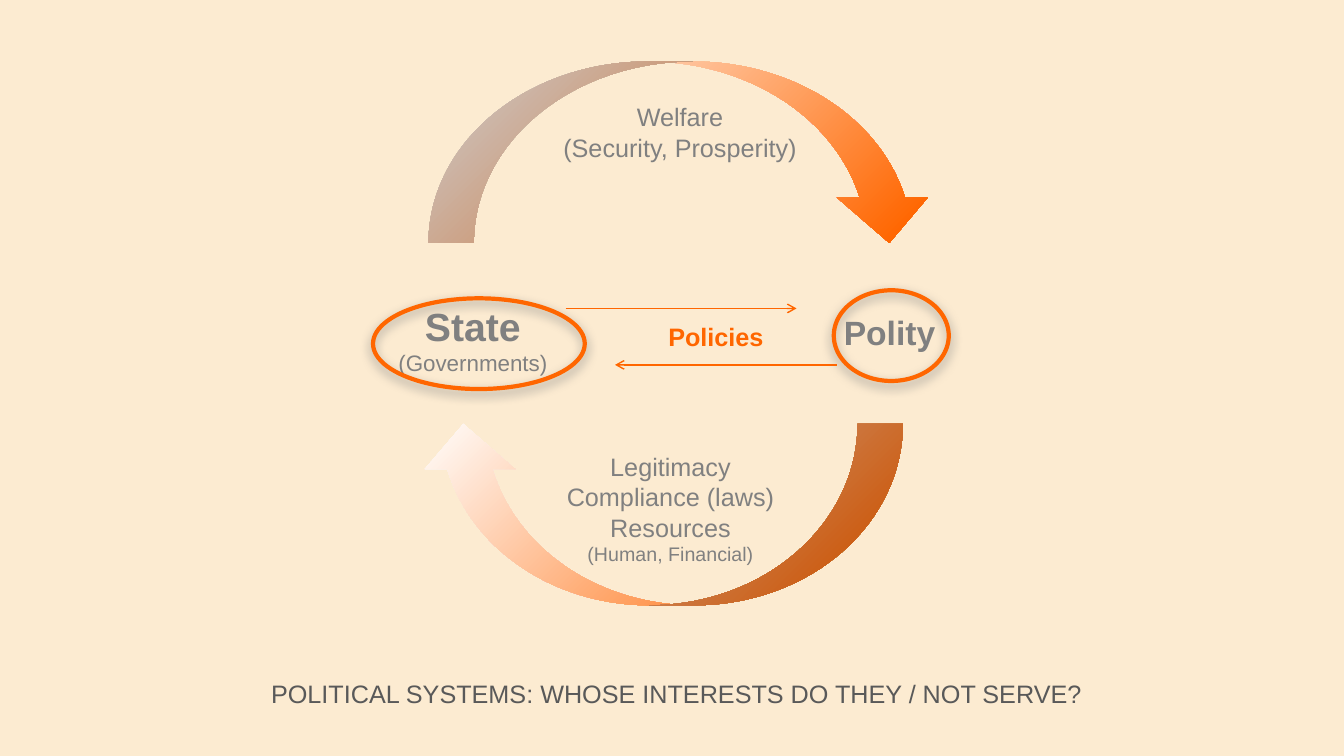
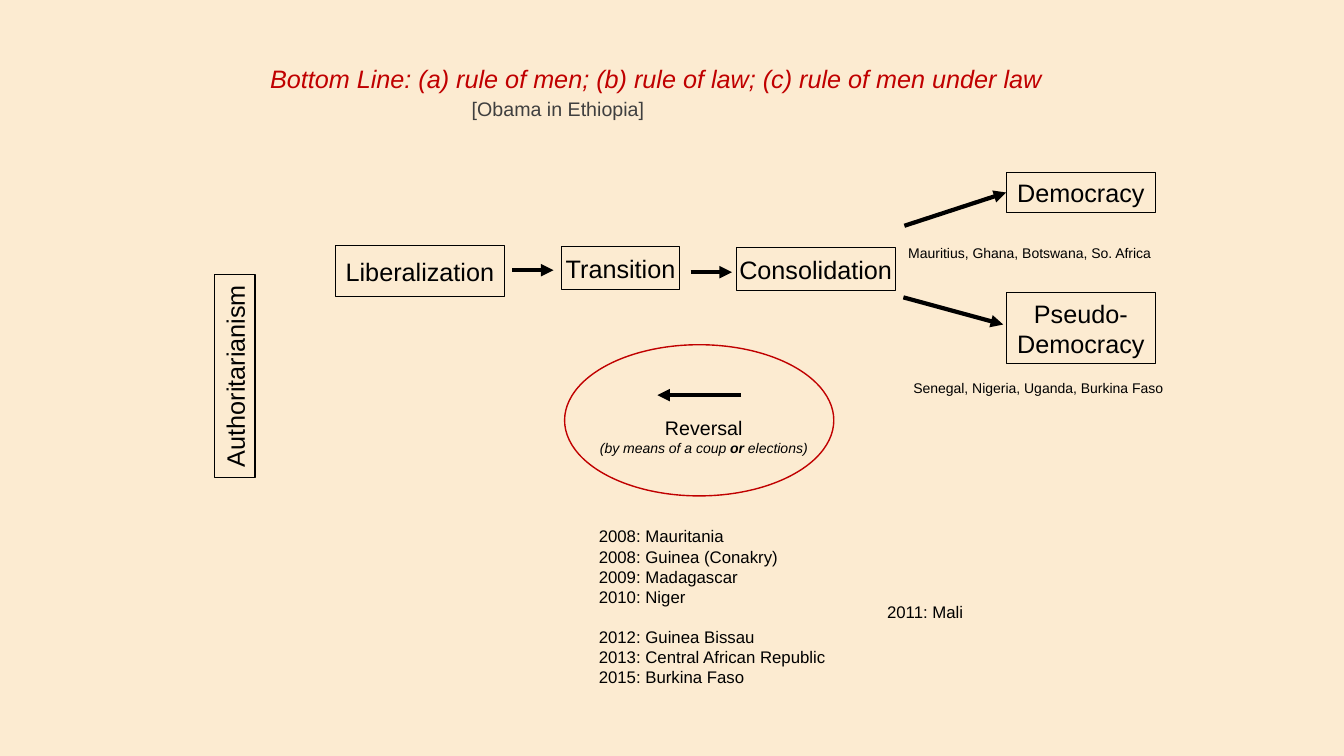
from dataclasses import dataclass

from pptx import Presentation
from pptx.dml.color import RGBColor
from pptx.enum.shapes import MSO_CONNECTOR, MSO_SHAPE
from pptx.enum.text import MSO_ANCHOR, MSO_AUTO_SIZE, PP_ALIGN
from pptx.oxml.ns import qn
from pptx.oxml.xmlchemy import OxmlElement
from pptx.util import Inches, Pt

CREAM = RGBColor(0xFC, 0xEB, 0xD1)
ORANGE = RGBColor(0xFF, 0x66, 0x00)
WHITE = RGBColor(0xFF, 0xFF, 0xFF)
BLACK = RGBColor(0x00, 0x00, 0x00)
RED = RGBColor(0xC0, 0x00, 0x00)
GRAY = RGBColor(0x80, 0x80, 0x80)
SLATE = RGBColor(0x59, 0x59, 0x59)
CHARCOAL = RGBColor(0x3F, 0x3F, 0x3F)
FONT = "Arial"


@dataclass(frozen=True)
class Line:
    text: str
    size: float = 18
    color: RGBColor = BLACK
    bold: bool = False
    italic: bool = False
    emphasis: str = ""
    indent: float = 0
    space_before: float = 0


@dataclass(frozen=True)
class Box:
    left: float
    top: float
    width: float
    height: float
    rotation: float = 0

    def lengths(self):
        return [Inches(n) for n in (self.left, self.top, self.width, self.height)]


@dataclass(frozen=True)
class Label:
    box: Box
    lines: tuple[Line, ...]
    align: PP_ALIGN = PP_ALIGN.LEFT


@dataclass(frozen=True)
class Arrow:
    start: tuple[float, float]
    end: tuple[float, float]
    color: RGBColor = BLACK
    width: float = 3
    head: str = "triangle"


def add_child(parent, tag: str, **attributes):
    child = OxmlElement(tag)
    for name, value in attributes.items():
        child.set(name, str(value))
    parent.append(child)
    return child


def write_lines(frame, lines: tuple[Line, ...], align: PP_ALIGN) -> None:
    frame.word_wrap = False
    for index, line in enumerate(lines):
        paragraph = frame.add_paragraph() if index else frame.paragraphs[0]
        paragraph.alignment = align
        font = paragraph.font
        font.name, font.size = FONT, Pt(line.size)
        font.bold, font.italic = line.bold, line.italic
        font.color.rgb = line.color
        if line.space_before:
            paragraph.space_before = Pt(line.space_before)
        if line.indent:
            paragraph._p.get_or_add_pPr().set("marL", str(Inches(line.indent)))
        parts = line.text.partition(line.emphasis) if line.emphasis else (line.text,)
        for part in parts:
            run = paragraph.add_run()
            run.text = part
            if part == line.emphasis:
                run.font.bold = True


def add_label(slide, label: Label) -> None:
    frame = slide.shapes.add_textbox(*label.box.lengths()).text_frame
    write_lines(frame, label.lines, label.align)
    frame.auto_size = MSO_AUTO_SIZE.SHAPE_TO_FIT_TEXT


def add_outline(slide, kind: MSO_SHAPE, box: Box, color: RGBColor, width: float):
    shape = slide.shapes.add_shape(kind, *box.lengths())
    shape.rotation = box.rotation
    shape.shadow.inherit = False
    shape.fill.background()
    shape.line.color.rgb = color
    shape.line.width = Pt(width)
    return shape


def add_stage(slide, box: Box, *words: str):
    shape = add_outline(slide, MSO_SHAPE.RECTANGLE, box, BLACK, 0.75)
    shape.text_frame.vertical_anchor = MSO_ANCHOR.MIDDLE
    write_lines(shape.text_frame, tuple(Line(word) for word in words), PP_ALIGN.CENTER)
    return shape


def add_actor_ring(slide, box: Box) -> None:
    shape = add_outline(slide, MSO_SHAPE.OVAL, box, ORANGE, 3)
    effects = shape._element.spPr.find(qn("a:effectLst"))
    shadow = add_child(effects, "a:outerShdw", blurRad=Pt(8), dist=Pt(3),
                       dir=90 * 60000, rotWithShape=0)
    color = add_child(shadow, "a:srgbClr", val=GRAY)
    add_child(color, "a:alpha", val=75000)


def add_cycle_arrow(slide, box: Box) -> None:
    shape = slide.shapes.add_shape(MSO_SHAPE.CURVED_LEFT_ARROW, *box.lengths())
    shape.rotation = box.rotation
    shape.shadow.inherit = False
    shape.line.fill.background()
    shape.fill.gradient()
    for stop, position, color in zip(shape.fill.gradient_stops, (0.06, 1), (ORANGE, WHITE)):
        stop.position = position
        stop.color.rgb = color
    # Radial gradient centred on the lower right corner
    gradient = shape._element.spPr.find(qn("a:gradFill"))
    gradient.set("rotWithShape", "0")
    gradient.remove(gradient.find(qn("a:lin")))
    radial = add_child(gradient, "a:path", path="circle")
    add_child(radial, "a:fillToRect", l=100000, t=100000)


def add_arrow(slide, arrow: Arrow):
    points = [Inches(n) for n in (*arrow.start, *arrow.end)]
    connector = slide.shapes.add_connector(MSO_CONNECTOR.STRAIGHT, *points)
    connector.line.color.rgb = arrow.color
    connector.line.width = Pt(arrow.width)
    add_child(connector.line._get_or_add_ln(), "a:tailEnd", type=arrow.head)
    add_child(connector._element.spPr, "a:effectLst")
    return connector


def add_slide(presentation):
    return presentation.slides.add_slide(presentation.slide_layouts[6])


def build_political_system(presentation) -> None:
    slide = add_slide(presentation)
    center = PP_ALIGN.CENTER

    # Labels
    labels = (
        Label(Box(2.59, 6.68, 8.32, 0.4), (
            Line("POLITICAL SYSTEMS: WHOSE INTERESTS DO THEY / NOT SERVE?", color=SLATE),)),
        Label(Box(3.84, 2.95, 1.7, 0.84), (
            Line("State", 28, GRAY, bold=True), Line("(Governments)", 16, GRAY)), center),
        Label(Box(8.27, 3.05, 1.12, 0.5), (Line("Polity", 24, GRAY, bold=True),)),
        Label(Box(5.48, 0.96, 2.53, 0.7), (
            Line("Welfare", color=GRAY), Line("(Security, Prosperity)", color=GRAY)), center),
        Label(Box(5.51, 4.43, 2.28, 1.25), (
            Line("Legitimacy", color=GRAY), Line("Compliance (laws)", color=GRAY),
            Line("Resources", color=GRAY), Line("(Human, Financial)", 14, GRAY)), center),
        Label(Box(6.53, 3.14, 1.16, 0.4), (Line("Policies", color=ORANGE, bold=True),)),
    )
    for label in labels:
        add_label(slide, label)

    # State and polity
    for box in (Box(3.7, 2.96, 2.1, 0.9), Box(8.27, 2.88, 1.14, 0.9)):
        add_actor_ring(slide, box)

    # Cycle of welfare and legitimacy
    for box in (Box(5.86, -1, 1.8, 5.02, 270), Box(5.65, 2.7, 1.8, 4.81, 90)):
        add_cycle_arrow(slide, box)

    # Policies in both directions
    for start, end in (((8.3, 3.62), (6.1, 3.62)), ((5.61, 3.06), (7.9, 3.06))):
        add_arrow(slide, Arrow(start, end, ORANGE, 1, "arrow"))


def build_democratization(presentation) -> None:
    slide = add_slide(presentation)

    # Stages and outcomes
    add_stage(slide, Box(1.32, 3.53, 2.02, 0.4, 270), "Authoritarianism")
    add_stage(slide, Box(3.33, 2.44, 1.67, 0.5), "Liberalization")
    add_stage(slide, Box(5.57, 2.45, 1.17, 0.42), "Transition")
    add_stage(slide, Box(7.3, 2.46, 1.58, 0.42), "Consolidation")
    democracy = add_stage(slide, Box(9.98, 1.71, 1.48, 0.4), "Democracy")
    add_stage(slide, Box(9.98, 2.9, 1.48, 0.71), "Pseudo-", "Democracy")

    # Reversal
    add_outline(slide, MSO_SHAPE.OVAL, Box(5.6, 3.42, 2.67, 1.5), RED, 1)

    # Arrows between stages
    arrows = (
        Arrow((5.08, 2.68), (5.49, 2.68)),
        Arrow((6.85, 2.7), (7.26, 2.7)),
        Arrow((7.35, 3.92), (6.52, 3.92)),
        Arrow((8.96, 2.95), (9.95, 3.22)),
    )
    for arrow in arrows:
        add_arrow(slide, arrow)
    add_arrow(slide, Arrow((8.97, 2.24), (9.98, 1.91))).end_connect(democracy, 1)

    # Title, examples and reversal years
    labels = (
        Label(Box(2.58, 0.58, 7.99, 0.71), (
            Line("Bottom Line: (a) rule of men; (b) rule of law; (c) rule of men under law",
                 color=RED, italic=True),
            Line("[Obama in Ethiopia]", 14, CHARCOAL, indent=2, space_before=2))),
        Label(Box(8.91, 2.38, 2.64, 0.27), (
            Line("Mauritius, Ghana, Botswana, So. Africa", 10),)),
        Label(Box(8.96, 3.72, 2.73, 0.27), (
            Line("Senegal, Nigeria, Uganda, Burkina Faso", 10),)),
        Label(Box(5.85, 4.08, 2.26, 0.51), (
            Line("Reversal", 14),
            Line("(by means of a coup or elections)", 10, italic=True, emphasis="or")),
            PP_ALIGN.CENTER),
        Label(Box(5.84, 5.17, 2.48, 1.72), (
            Line("2008: Mauritania", 12),
            Line("2008: Guinea (Conakry)", 12),
            Line("2009: Madagascar", 12),
            Line("2010: Niger", 12),
            Line("2012: Guinea Bissau", 12, space_before=14),
            Line("2013: Central African Republic", 12),
            Line("2015: Burkina Faso", 12))),
        Label(Box(8.7, 5.92, 0.96, 0.3), (Line("2011: Mali", 12),)),
    )
    for label in labels:
        add_label(slide, label)


def main() -> None:
    presentation = Presentation()
    presentation.slide_width = Inches(13.33)
    presentation.slide_height = Inches(7.5)
    background = presentation.slide_master.background.fill
    background.solid()
    background.fore_color.rgb = CREAM
    build_political_system(presentation)
    build_democratization(presentation)
    presentation.save("out.pptx")


if __name__ == "__main__":
    main()
